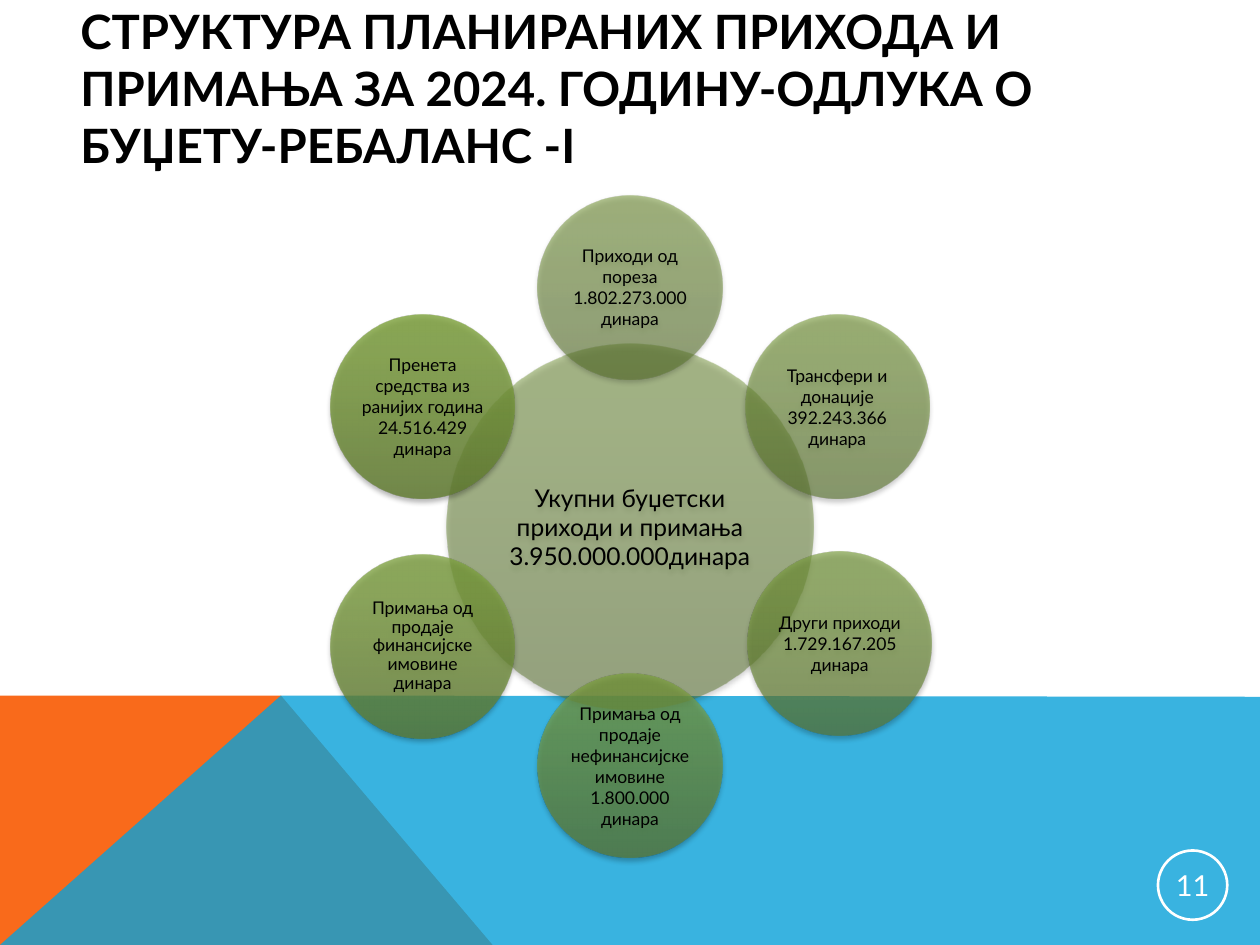
from math import cos, radians, sin

from lxml import etree
from pptx import Presentation
from pptx.dml.color import RGBColor
from pptx.enum.shapes import MSO_SHAPE
from pptx.enum.text import MSO_ANCHOR, PP_ALIGN
from pptx.oxml.ns import qn
from pptx.util import Inches, Pt

ELLIPSE = MSO_SHAPE.OVAL
MIDDLE = MSO_ANCHOR.MIDDLE
CENTER, LEFT = PP_ALIGN.CENTER, PP_ALIGN.LEFT

THEME = {
    "font": "Lato",
    "text": "000000",
    "light": "FFFFFF",
    "orange": "F96A1B",
    "blue": "08A1D9",
    "title_size": 27,
    "hub_size": 14,
    "satellite_size": 10,
    "number_size": 16.5,
}

TITLE = "СТРУКТУРА ПЛАНИРАНИХ ПРИХОДА И ПРИМАЊА ЗА 2024. ГОДИНУ-ОДЛУКА О БУЏЕТУ-РЕБАЛАНС -I"
PAGE_NUMBER = "11"
HUB = ("Укупни буџетски приходи и примања 3.950.000.000динара", ("566F2A", "709037", "719235"))
SATELLITES = [
    ("Приходи од пореза 1.802.273.000 динара", ("58712B", "729238", "739536")),
    ("Трансфери и донације 392.243.366 динара", ("59732C", "749539", "759837")),
    ("Други приходи 1.729.167.205 динара", ("5B752D", "76983A", "779A39")),
    ("Примања од продаје нефинансијске имовине 1.800.000 динара", ("5C772E", "789A3B", "799D3A")),
    ("Примања од продаје финансијске имовине динара", ("5E792E", "7A9D3C", "7B9F3B")),
    ("Пренета средства из ранијих година 24.516.429 динара", ("607B2F", "7C9F3D", "7DA23C")),
]
NUDGES = {2: (0.02, -0.02)}
LINE_SPACINGS = {4: 0.9}

CENTER_X, CENTER_Y = 5, 4.18
HUB_SIZE, SATELLITE_SIZE, ORBIT = 2.91, 1.46, 1.9
STOPS = (0, 80, 100)

BANDS = [
    ([(0, 7.5), (0, 5.52), (2.23, 5.52), (3.91, 7.5)], THEME["orange"], 100),
    ([(0, 7.5), (2.23, 5.52), (10, 5.53), (10, 7.5)], THEME["blue"], 80),
]


def add_element(parent, tag, **attributes):
    return etree.SubElement(parent, qn(tag), {key: str(value) for key, value in attributes.items()})


def add_alpha(color, percent):
    add_element(color, "a:alpha", val=percent * 1000)


def add_color(parent, value, percent):
    add_alpha(add_element(parent, "a:srgbClr", val=value), percent)


def add_band(page, points, color, opacity):
    corners = [(Inches(x), Inches(y)) for x, y in points]
    builder = page.shapes.build_freeform(*corners[0])
    builder.add_line_segments(corners[1:], close=True)
    band = builder.convert_to_shape()
    band.shadow.inherit = False
    band.line.fill.background()
    band.fill.solid()
    band.fill.fore_color.rgb = RGBColor.from_string(color)
    if opacity < 100:
        add_alpha(band.fill._xPr.find(qn("a:solidFill"))[0], opacity)


def write(box, text, size, color=THEME["text"], align=CENTER, bold=False, inset=None, spacing=None):
    frame = box.text_frame
    frame.word_wrap = True
    frame.vertical_anchor = MIDDLE
    if inset is not None:
        frame.margin_left = frame.margin_right = Inches(inset)
        frame.margin_top = frame.margin_bottom = Inches(inset)
    para = frame.paragraphs[0]
    para.text = text
    para.alignment = align
    if spacing:
        para.line_spacing = spacing
    para.font.name = THEME["font"]
    para.font.size = Pt(size)
    para.font.bold = bold
    para.font.color.rgb = RGBColor.from_string(color)


def add_circle(page, x, y, size):
    circle = page.shapes.add_shape(
        ELLIPSE, Inches(x - size / 2), Inches(y - size / 2), Inches(size), Inches(size)
    )
    circle.shadow.inherit = False
    return circle


def add_bubble(page, x, y, size, colors, opacity):
    bubble = add_circle(page, x, y, size)
    bubble.line.fill.background()
    properties = bubble._element.spPr
    gradient = add_element(properties, "a:gradFill", rotWithShape=1)
    stops = add_element(gradient, "a:gsLst")
    for position, color in zip(STOPS, colors):
        add_color(add_element(stops, "a:gs", pos=position * 1000), color, opacity)
    add_element(gradient, "a:lin", ang=270 * 60000, scaled=0)
    properties.find(qn("a:ln")).addprevious(gradient)
    shadow = add_element(
        properties.find(qn("a:effectLst")), "a:outerShdw",
        blurRad=Pt(3.1), dist=Pt(1.8), dir=90 * 60000, rotWithShape=0,
    )
    add_color(shadow, "000000", 35)
    return bubble


def main():
    deck = Presentation()
    deck.slide_width, deck.slide_height = Inches(10), Inches(7.5)
    page = deck.slides.add_slide(deck.slide_layouts[6])

    for points, color, opacity in BANDS:
        add_band(page, points, color, opacity)

    title = page.shapes.add_textbox(Inches(0.54), Inches(0.27), Inches(9), Inches(0.85))
    write(title, TITLE, THEME["title_size"], align=LEFT, bold=True)

    badge = add_circle(page, 9.465, 7.025, 0.55)
    badge.fill.background()
    badge.line.color.rgb = RGBColor.from_string(THEME["light"])
    badge.line.width = Pt(1.5)
    write(badge, PAGE_NUMBER, THEME["number_size"], color=THEME["light"], inset=0.01)

    text, colors = HUB
    hub = add_bubble(page, CENTER_X, CENTER_Y, HUB_SIZE, colors, 50)
    write(hub, text, THEME["hub_size"], inset=0.02)

    for index, (text, colors) in enumerate(SATELLITES):
        angle = radians(index * 360 / len(SATELLITES))
        shift_x, shift_y = NUDGES.get(index, (0, 0))
        x = CENTER_X + ORBIT * sin(angle) + shift_x
        y = CENTER_Y - ORBIT * cos(angle) + shift_y
        satellite = add_bubble(page, x, y, SATELLITE_SIZE, colors, 55 + 5 * index)
        write(satellite, text, THEME["satellite_size"], inset=0.01, spacing=LINE_SPACINGS.get(index))

    deck.save("out.pptx")


if __name__ == "__main__":
    main()
